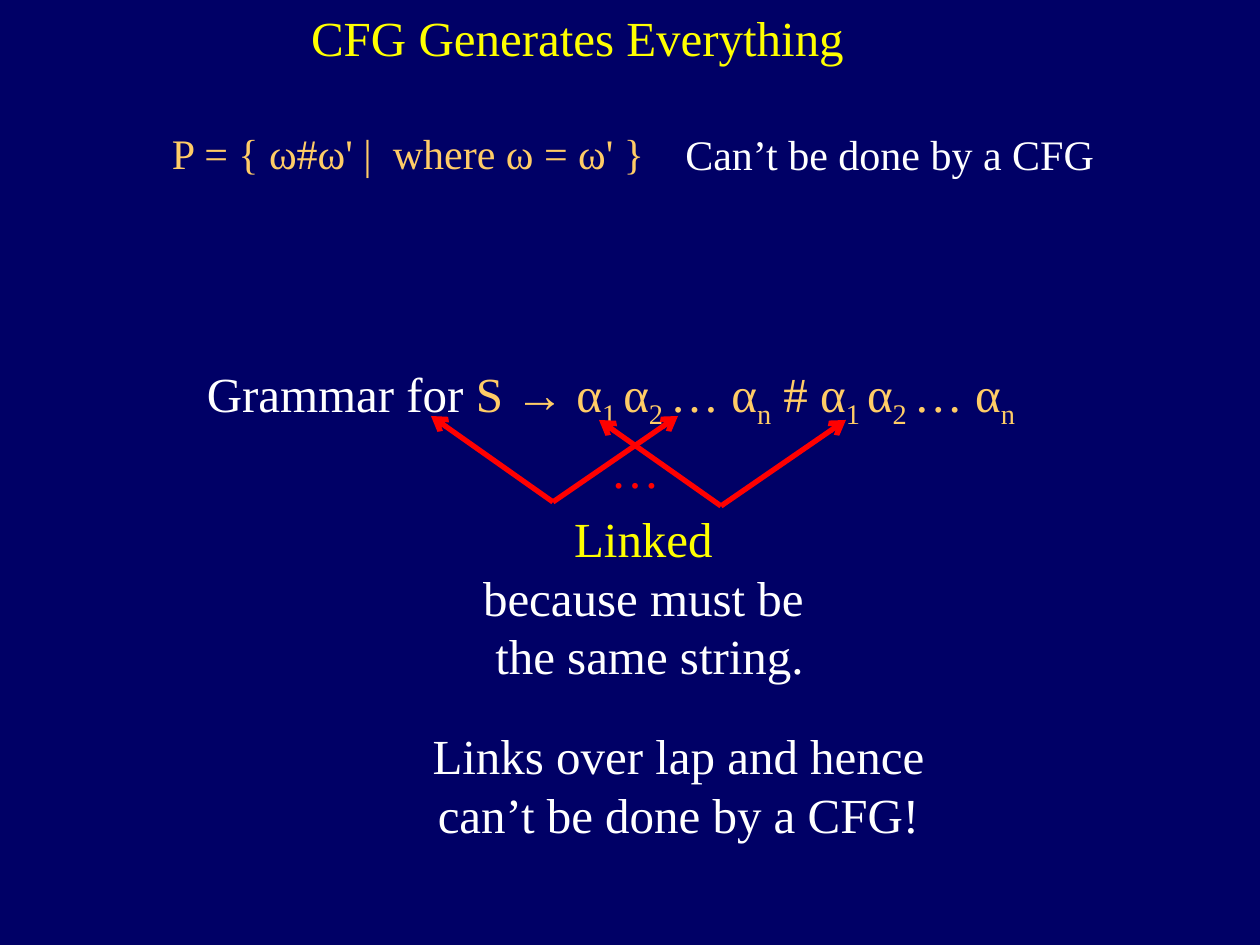
from pptx import Presentation
from pptx.dml.color import RGBColor
from pptx.enum.shapes import MSO_CONNECTOR
from pptx.enum.text import MSO_ANCHOR, MSO_AUTO_SIZE, PP_ALIGN
from pptx.oxml.ns import qn
from pptx.util import Emu, Pt
from lxml import etree

STRAIGHT = MSO_CONNECTOR.STRAIGHT
LEFT, CENTER = PP_ALIGN.LEFT, PP_ALIGN.CENTER
TOP, MIDDLE = MSO_ANCHOR.TOP, MSO_ANCHOR.MIDDLE
FIT, FIXED = MSO_AUTO_SIZE.SHAPE_TO_FIT_TEXT, MSO_AUTO_SIZE.NONE

NAVY, WHITE, YELLOW, GOLD, RED = "000066", "FFFFFF", "FFFF00", "FFCC66", "FF0000"
SUB_MARK = "~"  # switches subscript on and off


def px(n):
    return Emu(round(n * 914400 / 126))


def rgb(value):
    return RGBColor.from_string(value)


class Board:
    """Style and current slide."""
    font = "Times New Roman"
    line_width = 3

    def __init__(self, prs, background):
        self.slide = prs.slides.add_slide(prs.slide_layouts[6])
        fill = self.slide.background.fill
        fill.solid()
        fill.fore_color.rgb = rgb(background)

    def run(self, p, text, size, color, sub=False):
        r = p.add_run()
        r.text = text
        for name, value in {"name": self.font, "size": Pt(size)}.items():
            setattr(r.font, name, value)
        r.font.color.rgb = rgb(color)
        if sub:
            r._r.get_or_add_rPr().set("baseline", "-25000")

    def text(self, box, paragraphs, size=28, align=CENTER, **frame):
        """Each paragraph is a list of (text, color); a newline breaks the line."""
        sp = self.slide.shapes.add_textbox(*map(px, box))
        tf = sp.text_frame
        settings = {"word_wrap": False, "auto_size": FIT, "vertical_anchor": TOP}
        for name, value in (settings | frame).items():
            setattr(tf, name, value)
        for i, parts in enumerate(paragraphs):
            p = tf.add_paragraph() if i else tf.paragraphs[0]
            p.alignment = align
            for text, color in parts:
                for j, line in enumerate(text.split("\n")):
                    if j:
                        p.add_line_break()
                    for k, piece in enumerate(line.split(SUB_MARK)):
                        if piece:
                            self.run(p, piece, size, color, sub=k % 2 == 1)

    def arrow(self, start, end, color):
        c = self.slide.shapes.add_connector(STRAIGHT, *map(px, (*start, *end)))
        c.line.color.rgb = rgb(color)
        c.line.width = Pt(self.line_width)
        etree.SubElement(c.line._get_or_add_ln(), qn("a:tailEnd"), type="arrow")
        etree.SubElement(c._element.spPr, qn("a:effectLst"))

    def link(self, x, y, color):
        """Two arrows rising from one point to the linked symbols."""
        for dx in (-122, 125):
            self.arrow((x, y), (x + dx, y - 86), color)


def main():
    prs = Presentation()
    prs.slide_width, prs.slide_height = px(1260), px(945)
    board = Board(prs, NAVY)

    board.text((21, 357, 1187, 72), [[
        ("Grammar for ", WHITE),
        ("S → α~1 ~α~2 ~… α~n~ # α~1 ~α~2 ~… α~n ~", GOLD),
    ]], word_wrap=True)

    board.link(553, 502, RED)
    board.text((469, 502, 361, 191), [
        [("Linked ", YELLOW)],
        [("because must be \nthe same string.", WHITE)],
    ])
    board.link(721, 506, RED)
    board.text((597, 433, 76, 72), [[("…", RED)]])

    board.text((412, 719, 533, 131), [
        [("Links over lap and hence", WHITE)],
        [("can’t be done by a CFG!", WHITE)],
    ])
    board.text((134, 121, 576, 64), [[("P = { ω#ω' |  where ω = ω' }", GOLD)]],
               size=24, align=LEFT, word_wrap=True,
               margin_left=px(38), margin_right=px(38))
    board.text((42, -42, 1071, 158), [[("CFG Generates Everything", YELLOW)]],
               word_wrap=True, auto_size=FIXED, vertical_anchor=MIDDLE)
    board.text((673, 122, 452, 63), [[("Can’t be done by a CFG", WHITE)]],
               size=24, align=LEFT)

    prs.save("out.pptx")


if __name__ == "__main__":
    main()
